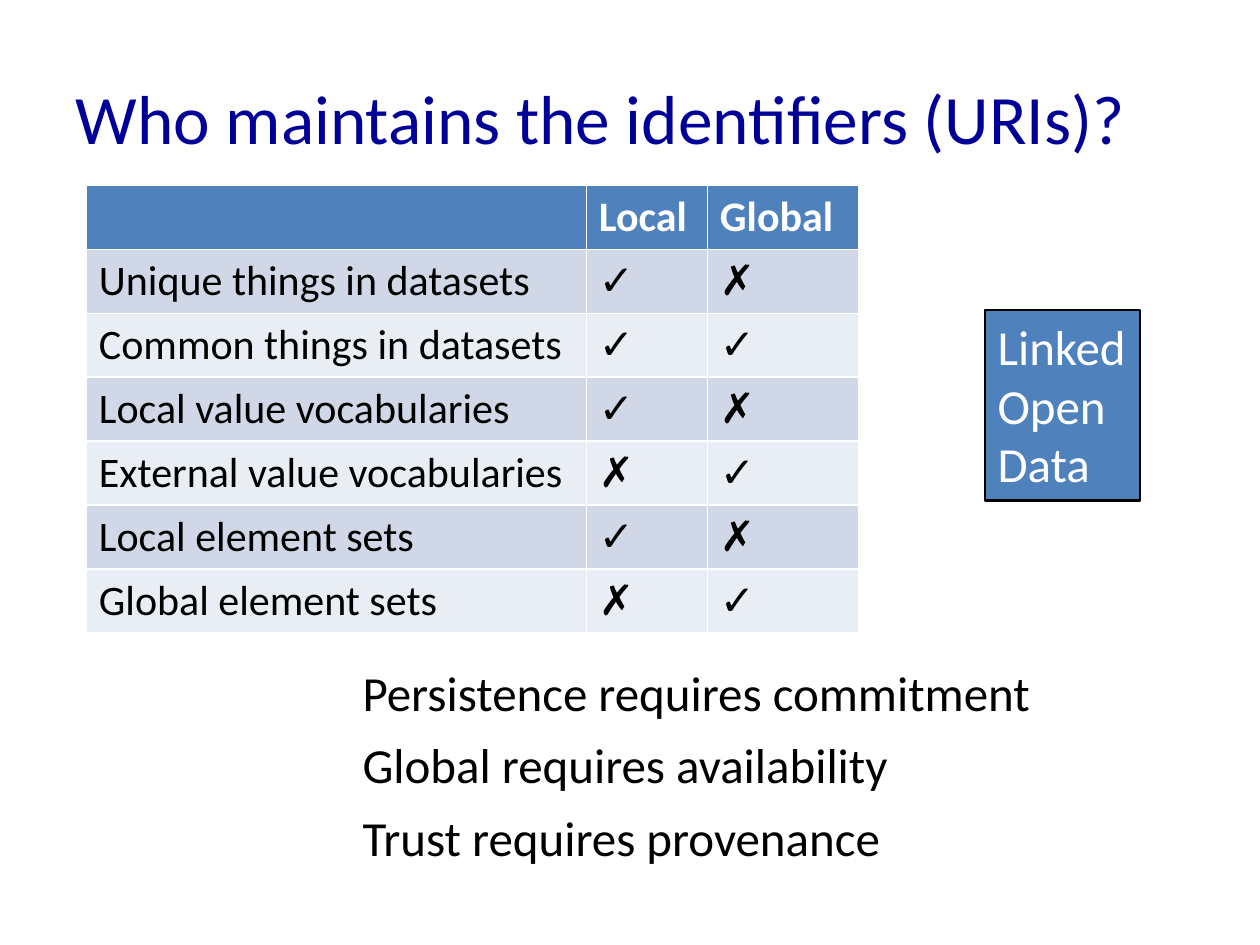
from dataclasses import dataclass
from typing import NamedTuple

from pptx import Presentation
from pptx.dml.color import RGBColor
from pptx.enum.shapes import MSO_SHAPE as Preset
from pptx.enum.text import MSO_ANCHOR as Anchor, MSO_AUTO_SIZE as AutoSize, PP_ALIGN as Align
from pptx.util import Cm, Pt


@dataclass(frozen=True)
class Theme:
    font: str = "Calibri"
    heading: str = "000099"
    ink: str = "000000"
    light: str = "FFFFFF"
    accent: str = "4F81BD"
    bands: tuple[str, str] = ("D0D8E8", "E9EDF4")
    title_size: float = 39.6
    body_size: float = 28
    table_size: float = 24


class Box(NamedTuple):
    left: float
    top: float
    width: float
    height: float

    def lengths(self) -> tuple[Cm, ...]:
        return tuple(Cm(side) for side in self)


class Responsibility(NamedTuple):
    resource: str
    local: bool
    worldwide: bool


class Principle(NamedTuple):
    wording: str
    width: float


THEME = Theme()
HEADERS = ("", "Local", "Global")
COLUMN_WIDTHS = (10.08, 2.44, 3.05)
ROW_HEIGHT = 1.27
RESPONSIBILITIES = (
    Responsibility("Unique things in datasets", True, False),
    Responsibility("Common things in datasets", True, True),
    Responsibility("Local value vocabularies", True, False),
    Responsibility("External value vocabularies", False, True),
    Responsibility("Local element sets", True, False),
    Responsibility("Global element sets", False, True),
)
PRINCIPLES = (
    Principle("Persistence requires commitment", 14.12),
    Principle("Global requires availability", 11.2),
    Principle("Trust requires provenance", 11.05),
)
PRINCIPLE_PITCH = 1.46


def rgb(code: str) -> RGBColor:
    return RGBColor.from_string(code)


def write(frame, text: str, *, size: float = THEME.body_size, color: str = THEME.ink,
          bold: bool = False) -> None:
    """Fill a text frame, one left-aligned paragraph per line of text."""
    frame.text = text
    for paragraph in frame.paragraphs:
        paragraph.alignment = Align.LEFT
        for run in paragraph.runs:
            run.font.name = THEME.font
            run.font.size = Pt(size)
            run.font.bold = bold
            run.font.color.rgb = rgb(color)


def fit_to_text(frame) -> None:
    """Keep lines unwrapped and let the box follow its text."""
    frame.word_wrap = False
    frame.auto_size = AutoSize.SHAPE_TO_FIT_TEXT


def place_title(slide, text: str, box: Box) -> None:
    """Move the title placeholder and write the heading in it."""
    heading = slide.shapes.title
    heading.left, heading.top, heading.width, heading.height = box.lengths()
    heading.text_frame.auto_size = AutoSize.NONE
    heading.text_frame.vertical_anchor = Anchor.MIDDLE
    write(heading.text_frame, text, size=THEME.title_size, color=THEME.heading)


def draw_responsibilities(slide, left: float, top: float) -> None:
    """Draw the table of who maintains which identifiers."""
    marks = {True: "✓", False: "✗"}
    rows = [HEADERS] + [
        (entry.resource, marks[entry.local], marks[entry.worldwide]) for entry in RESPONSIBILITIES
    ]
    box = Box(left, top, sum(COLUMN_WIDTHS), ROW_HEIGHT * len(rows))
    table = slide.shapes.add_table(len(rows), len(HEADERS), *box.lengths()).table
    for column, width in zip(table.columns, COLUMN_WIDTHS):
        column.width = Cm(width)
    for index, wording in enumerate(rows):
        header = index == 0
        fill = THEME.accent if header else THEME.bands[(index - 1) % 2]
        for cell, text in zip(table.rows[index].cells, wording):
            cell.fill.solid()
            cell.fill.fore_color.rgb = rgb(fill)
            write(cell.text_frame, text, size=THEME.table_size, bold=header,
                  color=THEME.light if header else THEME.ink)


def draw_principle(slide, principle: Principle, left: float, top: float) -> None:
    """Draw one line of advice below the table."""
    box = Box(left, top, principle.width, 1.45)
    frame = slide.shapes.add_textbox(*box.lengths()).text_frame
    fit_to_text(frame)
    write(frame, principle.wording)


def draw_label(slide, text: str, box: Box) -> None:
    """Draw the outlined label beside the table."""
    label = slide.shapes.add_shape(Preset.RECTANGLE, *box.lengths())
    label.shadow.inherit = False
    label.fill.solid()
    label.fill.fore_color.rgb = rgb(THEME.accent)
    label.line.color.rgb = rgb(THEME.ink)
    label.line.width = Pt(1.5)
    label.text_frame.vertical_anchor = Anchor.TOP
    fit_to_text(label.text_frame)
    write(label.text_frame, text, color=THEME.light)


def main() -> None:
    """Build the slide and save it."""
    deck = Presentation()
    deck.slide_width, deck.slide_height = Cm(25.4), Cm(19.05)
    slide = deck.slides.add_slide(deck.slide_layouts.get_by_name("Title Only"))
    place_title(slide, "Who maintains the identifiers (URIs)?", Box(1.27, 0.76, 22.86, 3.18))
    draw_responsibilities(slide, 1.74, 3.74)
    for order, principle in enumerate(PRINCIPLES):
        draw_principle(slide, principle, 7.06, 13.23 + order * PRINCIPLE_PITCH)
    draw_label(slide, "Linked\nOpen\nData", Box(19.86, 6.25, 3.12, 3.84))
    deck.save("out.pptx")


if __name__ == "__main__":
    main()
